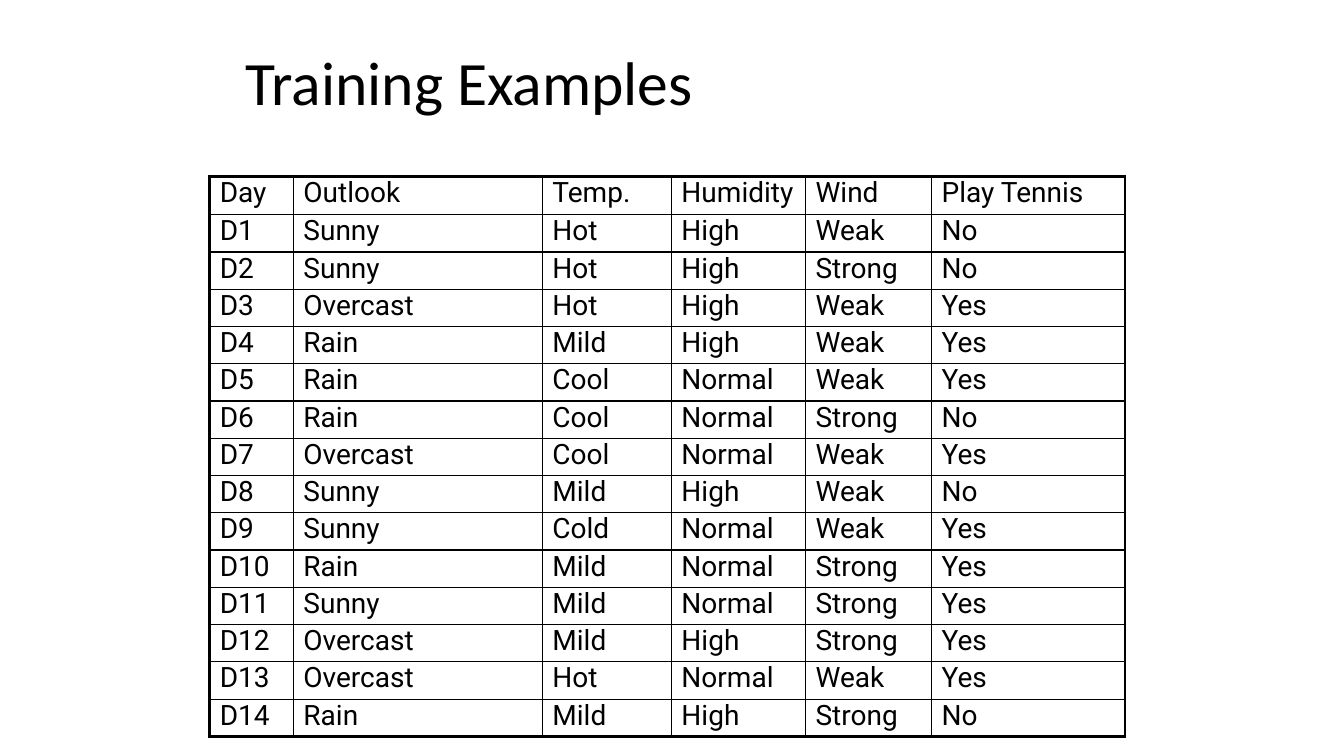
from dataclasses import dataclass

from lxml import etree
from pptx import Presentation, util as u
from pptx.dml.color import RGBColor
from pptx.enum import text
from pptx.oxml.ns import qn

WIDE, HIGH = 13.33, 7.5
INK = "000000"
THIN, THICK = 1, 2.25
ROW = 0.37


@dataclass(frozen=True)
class Field:
    """A table column: its heading and width in inches."""
    name: str
    width: float


@dataclass(frozen=True)
class Font:
    name: str
    size: float


FIELDS = [
    Field("Day", 0.83), Field("Outlook", 2.47), Field("Temp.", 1.28),
    Field("Humidity", 1.33), Field("Wind", 1.25), Field("Play Tennis", 1.92),
]
DAYS = """Sunny Hot High Weak No
Sunny Hot High Strong No
Overcast Hot High Weak Yes
Rain Mild High Weak Yes
Rain Cool Normal Weak Yes
Rain Cool Normal Strong No
Overcast Cool Normal Weak Yes
Sunny Mild High Weak No
Sunny Cold Normal Weak Yes
Rain Mild Normal Strong Yes
Sunny Mild Normal Strong Yes
Overcast Mild High Strong Yes
Overcast Hot Normal Weak Yes
Rain Mild High Strong No"""
HEAD = Font("Calibri", 44)
BODY = Font("Roboto", 20)


def color(code: str) -> RGBColor:
    return RGBColor.from_string(code)


def write(frame, words: str, font: Font, lead: float):
    """Put one left-aligned run in the frame and return its paragraph."""
    para = frame.paragraphs[0]
    para.alignment = text.PP_ALIGN.LEFT
    para.line_spacing = lead
    run = para.add_run()
    run.text = words
    run.font.name, run.font.size = font.name, u.Pt(font.size)
    run.font.color.rgb = color(INK)
    return para


def space(para, share: int) -> None:
    """Set the space before a paragraph as a percentage of its line."""
    para.space_before = u.Pt(0)
    gap = para._p.pPr.find(qn("a:spcBef"))
    gap.remove(gap[0])
    etree.SubElement(gap, qn("a:spcPct"), val=str(share * 1000))


def border(cell, side: str, width: float) -> None:
    props = cell._tc.get_or_add_tcPr()
    line = etree.SubElement(props, qn(f"a:ln{side}"), w=str(int(u.Pt(width))))
    fill = etree.SubElement(line, qn("a:solidFill"))
    etree.SubElement(fill, qn("a:srgbClr"), val=INK)


def title(slide, words: str) -> None:
    box = slide.shapes.title
    box.left, box.top = u.Inches(0.175 * WIDE), u.Inches(HIGH / 30)
    box.width, box.height = u.Inches(0.67 * WIDE), u.Inches(0.16 * HIGH)
    frame = box.text_frame
    frame.vertical_anchor = text.MSO_ANCHOR.MIDDLE
    frame.auto_size = text.MSO_AUTO_SIZE.NONE
    write(frame, words, HEAD, 0.9)


def grid(slide, rows: list[list[str]]) -> None:
    width = sum(f.width for f in FIELDS)
    frame = slide.shapes.add_table(
        len(rows), len(FIELDS), u.Inches(0.156 * WIDE), u.Inches(1.75),
        u.Inches(width), u.Inches(ROW * len(rows)))
    table = frame.table
    table.first_row = table.horz_banding = False
    for col, field in zip(table.columns, FIELDS):
        col.width = u.Inches(field.width)
    for row in table.rows:
        row.height = u.Inches(ROW)
    table.rows[0].height = u.Inches(ROW + 0.01)

    # Cells: thick lines on the outer edge, thin ones inside
    for r, row in enumerate(rows):
        for c, words in enumerate(row):
            cell = table.cell(r, c)
            space(write(cell.text_frame, words, BODY, 0.8), 20)
            edges = {"L": c == 0, "R": c == len(row) - 1,
                     "T": r == 0, "B": r == len(rows) - 1}
            for side, outer in edges.items():
                border(cell, side, THICK if outer else THIN)
            cell.fill.background()


def main() -> None:
    deck = Presentation()
    deck.slide_width, deck.slide_height = u.Inches(WIDE), u.Inches(HIGH)
    slide = deck.slides.add_slide(deck.slide_layouts.get_by_name("Title Only"))
    title(slide, "Training Examples")
    rows = [[f.name for f in FIELDS]]
    rows += [[f"D{n}", *day.split()] for n, day in enumerate(DAYS.splitlines(), 1)]
    grid(slide, rows)
    deck.save("out.pptx")


if __name__ == "__main__":
    main()
